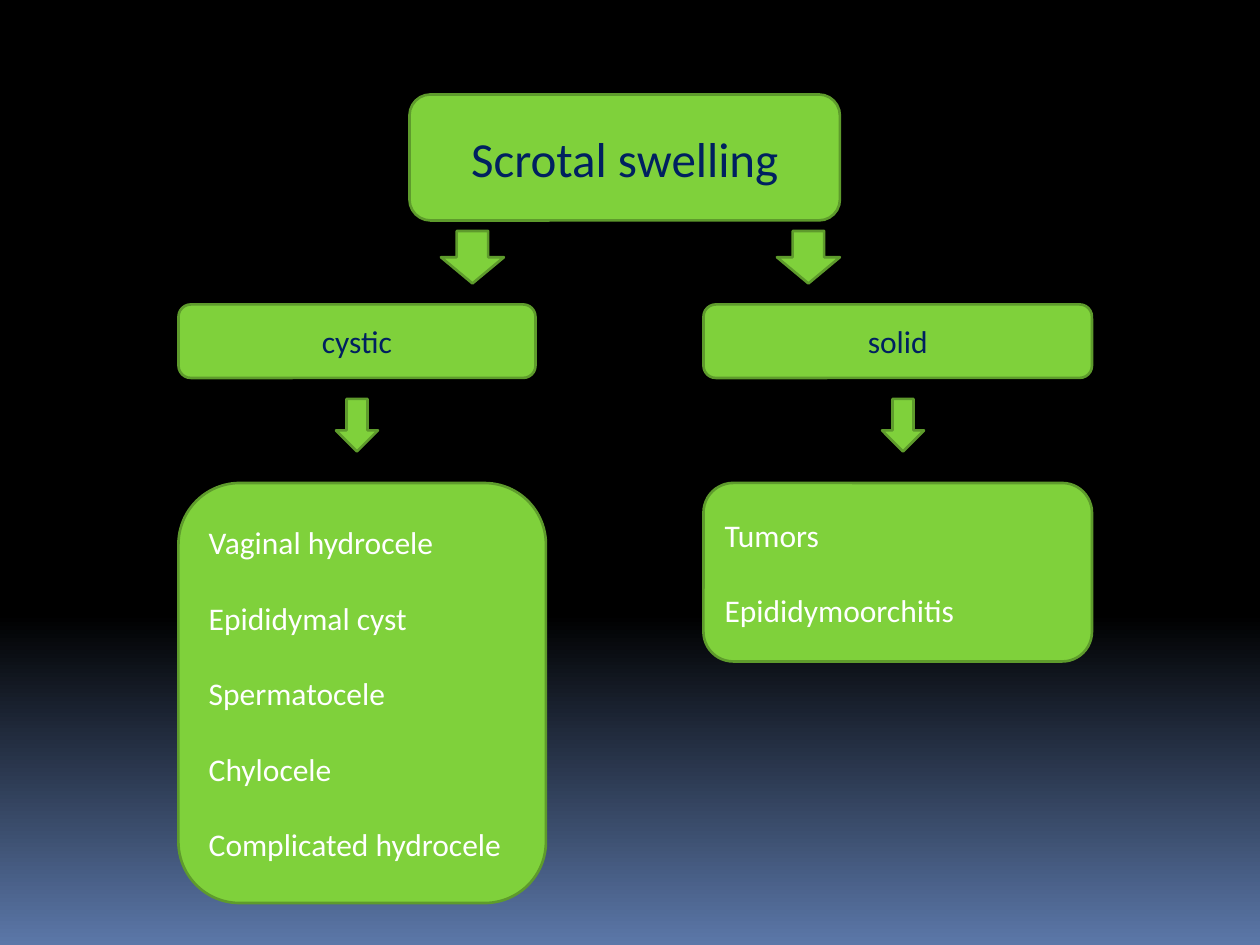
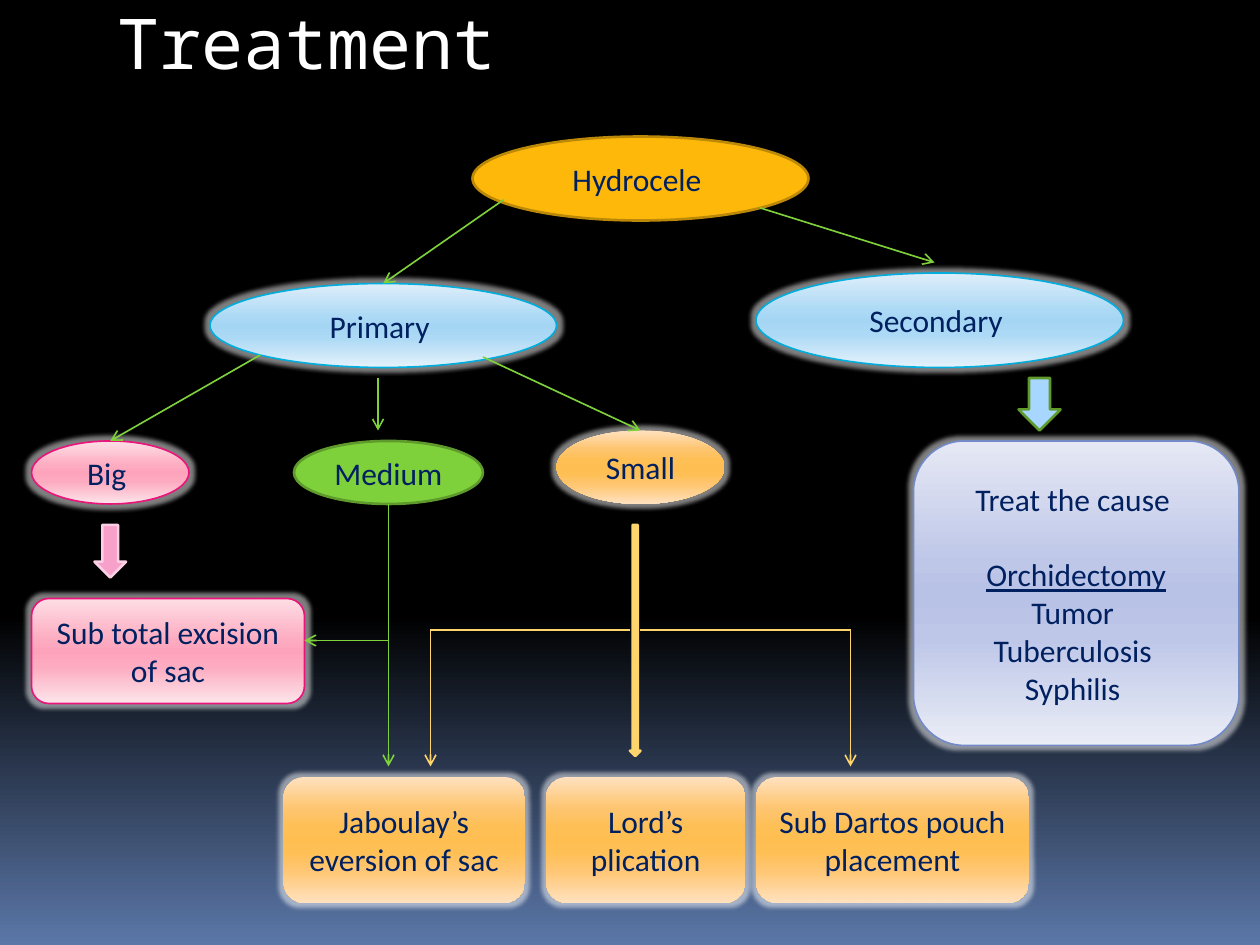
from dataclasses import dataclass
from typing import NamedTuple, Optional

from lxml import etree
from pptx import Presentation
from pptx import util as u
from pptx.dml.color import RGBColor
from pptx.enum import shapes, text
from pptx.oxml.ns import qn

COLORS = {
    "black": "000000", "dusk": "5B77A8", "white": "FFFFFF", "navy": "002060",
    "green": "7FD13B", "green edge": "5E9B2C",
    "gold": "FEB80A", "gold edge": "BC8807", "amber": "FED46C",
    "rose": "F7A1CA", "rose edge": "FBD0E4", "sky": "A7D6FF",
    "blue top": "DEEEFA", "blue mid": "ACD9F5", "blue core": "A4D6F4",
    "blue base": "E5F2FB", "blue edge": "00ADDC",
    "pink top": "FDDEE5", "pink mid": "FDABC0", "pink core": "FDA3BB",
    "pink base": "FDE5EB", "pink edge": "EA157A",
    "lilac top": "E5E8F4", "lilac mid": "BEC7E8", "lilac core": "B8C2E6",
    "lilac base": "EAEDF6", "lilac edge": "738AC8",
    "orange rim": "FFE1BF", "orange upper": "FEC570", "orange mid": "FEBF55",
    "orange core": "FEBE51", "orange lower": "FFC775",
}
FONT = "Calibri"
TITLE_FONT = "Noto Sans Mono"
THICK, THIN = 1.5, 0.94
LINE_GAP = 21.5
ROUND = shapes.MSO_SHAPE.ROUNDED_RECTANGLE
OVAL = shapes.MSO_SHAPE.OVAL
ARROW = shapes.MSO_SHAPE.DOWN_ARROW
CENTER, LEFT = text.PP_ALIGN.CENTER, text.PP_ALIGN.LEFT

Stops = tuple[tuple[int, str], ...]


class Style(NamedTuple):
    fill: str | Stops
    edge: Optional[str] = None
    weight: float = THICK
    glow: bool = False


class Line(NamedTuple):
    words: str
    gap: float = 0
    underline: bool = False


@dataclass
class Box:
    kind: shapes.MSO_SHAPE
    left: float
    top: float
    width: float
    height: float
    style: Style
    lines: tuple[Line, ...] = ()
    size: float = 18
    color: str = "navy"
    align: text.PP_ALIGN = CENTER


@dataclass
class Link:
    start: tuple[float, float]
    end: tuple[float, float]
    color: str = "green"
    arrow: bool = True
    target: Optional[str] = None


def banded(hue: str) -> Style:
    parts = ("top", "mid", "core", "mid", "base")
    stops = tuple((at, f"{hue} {part}") for at, part in zip((0, 40, 50, 65, 100), parts))
    return Style(stops, f"{hue} edge", THIN, True)


BACKDROP = ((0, "black"), (65, "black"), (100, "dusk"))
GREEN = Style("green", "green edge")
GOLD = Style("gold", "gold edge")
BLUE, PINK, LILAC = (banded(hue) for hue in ("blue", "pink", "lilac"))
ORANGE = Style(
    ((0, "orange rim"), (25, "orange upper"), (40, "orange mid"), (50, "orange core"),
     (60, "orange mid"), (75, "orange lower"), (100, "orange rim")),
    glow=True,
)


def one(words: str) -> tuple[Line, ...]:
    return (Line(words),)


def spaced(*items: str) -> tuple[Line, ...]:
    return tuple(Line(item, LINE_GAP if index else 0) for index, item in enumerate(items))


SWELLING_BOXES = (
    Box(ROUND, 39, 9, 41, 12, GREEN, one("Scrotal swelling"), size=28),
    Box(ROUND, 17, 29, 34, 7, GREEN, one("cystic")),
    Box(ROUND, 67, 29, 37, 7, GREEN, one("solid")),
    Box(ROUND, 17, 46, 35, 40, GREEN,
        spaced("Vaginal hydrocele", "Epididymal cyst", "Spermatocele", "Chylocele",
               "Complicated hydrocele"),
        color="white", align=LEFT),
    Box(ROUND, 67, 46, 37, 17, GREEN, spaced("Tumors", "Epididymoorchitis"),
        color="white", align=LEFT),
    *(Box(ARROW, left, 38, 4, 5, GREEN) for left in (32, 84)),
    *(Box(ARROW, left, 22, 6, 5, GREEN) for left in (42, 74)),
)

TREATMENT_BOXES = {
    "hydrocele": Box(OVAL, 45, 13, 32, 8, GOLD, one("Hydrocele ")),
    "primary": Box(OVAL, 20, 27, 33, 8, BLUE, one("Primary ")),
    "secondary": Box(OVAL, 72, 26, 35, 9, BLUE, one("Secondary ")),
    "cause": Box(ROUND, 87, 42, 31, 29, LILAC, (
        Line("Treat the cause "), Line("Orchidectomy", LINE_GAP, True),
        Line("Tumor "), Line("Tuberculosis "), Line("Syphilis "))),
    "big": Box(OVAL, 3, 42, 15, 6, PINK, one("Big ")),
    "medium": Box(OVAL, 28, 42, 18, 6, GREEN, one("Medium ")),
    "small": Box(OVAL, 53, 41, 16, 7, ORANGE, one("Small")),
    "pouch": Box(ROUND, 72, 74, 26, 12, ORANGE, one("Sub Dartos pouch placement")),
    "plication": Box(ROUND, 52, 74, 19, 12, ORANGE, one("Lord’s plication")),
    "eversion": Box(ROUND, 27, 74, 23, 12, ORANGE, one("Jaboulay’s eversion of sac")),
    "excision": Box(ROUND, 3, 57, 26, 10, PINK, one("Sub total excision of sac")),
}

TREATMENT_ARROWS = (
    Box(ARROW, 9, 50, 3, 5, Style("rose", "rose edge")),
    Box(ARROW, 97, 36, 4, 5, Style("sky", "green edge")),
    Box(ARROW, 60, 50, 1, 22, Style("amber", "amber")),
)

TREATMENT_LINKS = (
    Link((48, 19), (36.5, 27), target="primary"),
    Link((72.4, 19.8), (89, 25)),
    Link((46, 34), (61, 41), target="small"),
    Link((36, 36), (36, 41)),
    Link((24.8, 33.8), (10.5, 42), target="big"),
    Link((60, 60), (41, 60), "amber", arrow=False),
    Link((61, 60), (81, 60), "amber", arrow=False),
    Link((37, 48), (37, 73)),
    Link((37, 61), (29, 61)),
    Link((41, 60), (41, 73), "amber"),
    Link((81, 60), (81, 73), "amber"),
)


def grid(count: float) -> u.Length:
    return u.Cm(count * 2.54 / 12)


def rgb(name: str) -> RGBColor:
    return RGBColor.from_string(COLORS[name])


def paint_gradient(fill, element, stops: Stops) -> None:
    fill.gradient()
    fill.gradient_angle = 270
    stop_list = next(element.iter(qn("a:gsLst")))
    for stop in list(stop_list):
        stop_list.remove(stop)
    for position, name in stops:
        stop = etree.SubElement(stop_list, qn("a:gs"), pos=str(position * 1000))
        etree.SubElement(stop, qn("a:srgbClr"), val=COLORS[name])


def add_glow(shape) -> None:
    effects = next(shape.element.iter(qn("a:effectLst")))
    glow = etree.SubElement(effects, qn("a:glow"), rad="63500")
    color = etree.SubElement(glow, qn("a:srgbClr"), val=COLORS["white"])
    etree.SubElement(color, qn("a:alpha"), val="50000")


def write_lines(shape, box: Box) -> None:
    frame = shape.text_frame
    frame.word_wrap = True
    frame.vertical_anchor = text.MSO_ANCHOR.MIDDLE
    frame.text = "\n".join(line.words for line in box.lines)
    for para, line in zip(frame.paragraphs, box.lines):
        para.alignment = box.align
        para.space_before = u.Pt(line.gap)
        for span in para.runs:
            span.font.name = FONT
            span.font.size = u.Pt(box.size)
            span.font.color.rgb = rgb(box.color)
            span.font.underline = line.underline


def draw_box(page, box: Box):
    shape = page.shapes.add_shape(
        box.kind, grid(box.left), grid(box.top), grid(box.width), grid(box.height))
    shape.shadow.inherit = False
    style = box.style
    if isinstance(style.fill, str):
        shape.fill.solid()
        shape.fill.fore_color.rgb = rgb(style.fill)
    else:
        paint_gradient(shape.fill, shape.element, style.fill)
    if style.edge:
        shape.line.color.rgb = rgb(style.edge)
        shape.line.width = u.Pt(style.weight)
    else:
        shape.line.fill.background()
    if style.glow:
        add_glow(shape)
    if box.lines:
        write_lines(shape, box)
    return shape


def draw_link(page, link: Link, targets: dict) -> None:
    connector = page.shapes.add_connector(
        shapes.MSO_CONNECTOR.STRAIGHT, *map(grid, link.start + link.end))
    connector.line.color.rgb = rgb(link.color)
    connector.line.width = u.Pt(THIN)
    if link.target:
        connector.end_connect(targets[link.target], 0)
    if link.arrow:
        outline = next(connector.element.iter(qn("a:ln")))
        etree.SubElement(outline, qn("a:tailEnd"), type="arrow")
    etree.SubElement(connector.element.spPr, qn("a:effectLst"))


def draw_title(page, words: str) -> None:
    title = page.shapes.add_textbox(grid(10), grid(0), grid(102), grid(12))
    frame = title.text_frame
    frame.word_wrap = True
    frame.margin_top = u.Cm(0)
    frame.text = words
    span = frame.paragraphs[0].runs[0]
    span.font.name = TITLE_FONT
    span.font.size = u.Pt(40)
    span.font.color.rgb = rgb("white")
    span.font.element.set("spc", "-100") if hasattr(span.font, "element") else None


def add_page(deck):
    return deck.slides.add_slide(deck.slide_layouts[6])


def draw_swelling(deck) -> None:
    page = add_page(deck)
    for box in SWELLING_BOXES:
        draw_box(page, box)


def draw_treatment(deck) -> None:
    page = add_page(deck)
    draw_title(page, "Treatment")
    drawn = {name: draw_box(page, box) for name, box in TREATMENT_BOXES.items()}
    for arrow in TREATMENT_ARROWS:
        draw_box(page, arrow)
    for link in TREATMENT_LINKS:
        draw_link(page, link, drawn)


def main() -> None:
    deck = Presentation()
    deck.slide_width, deck.slide_height = grid(120), grid(90)
    master = deck.slide_master
    paint_gradient(master.background.fill, master.element, BACKDROP)
    draw_swelling(deck)
    draw_treatment(deck)
    deck.save("out.pptx")


if __name__ == "__main__":
    main()
